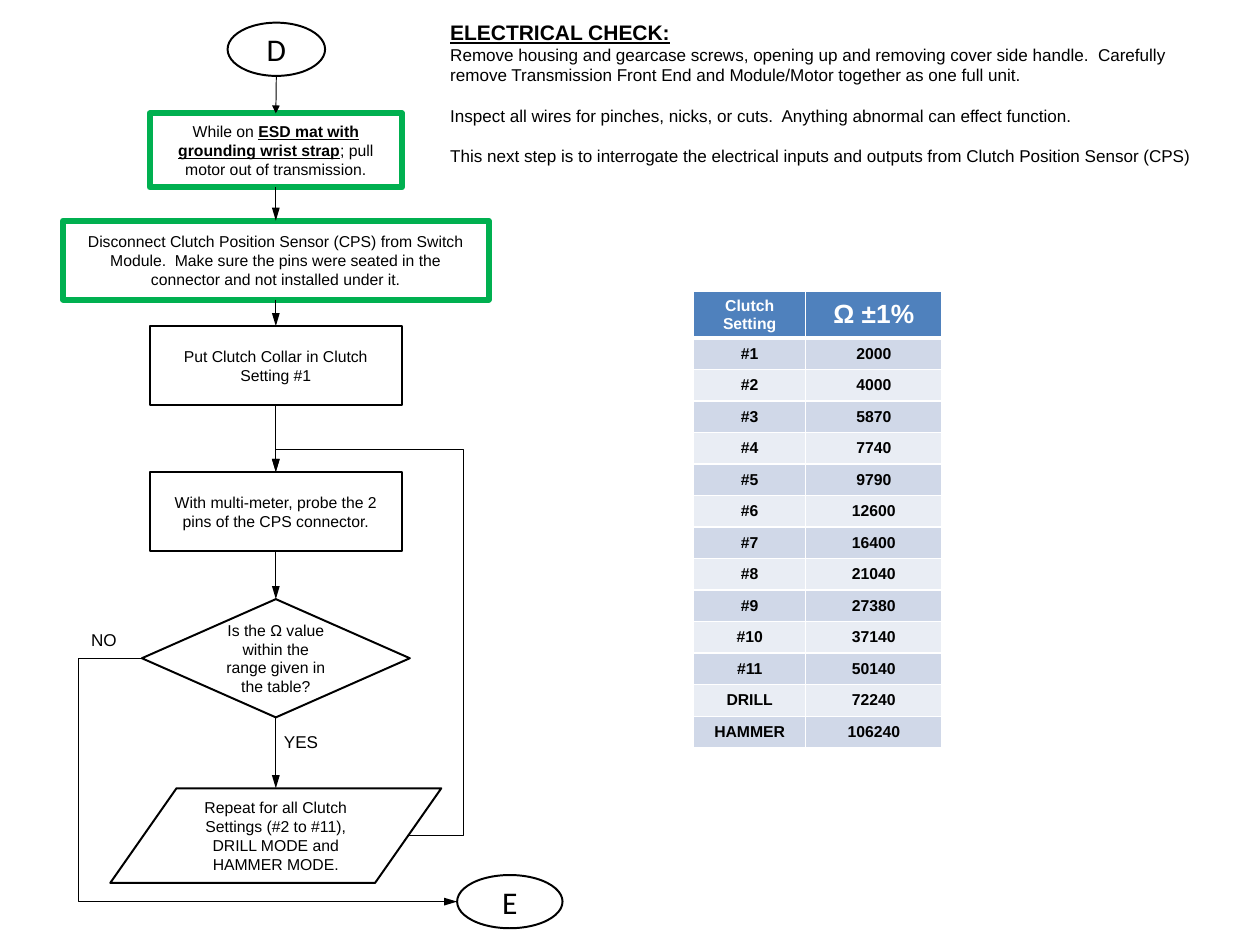
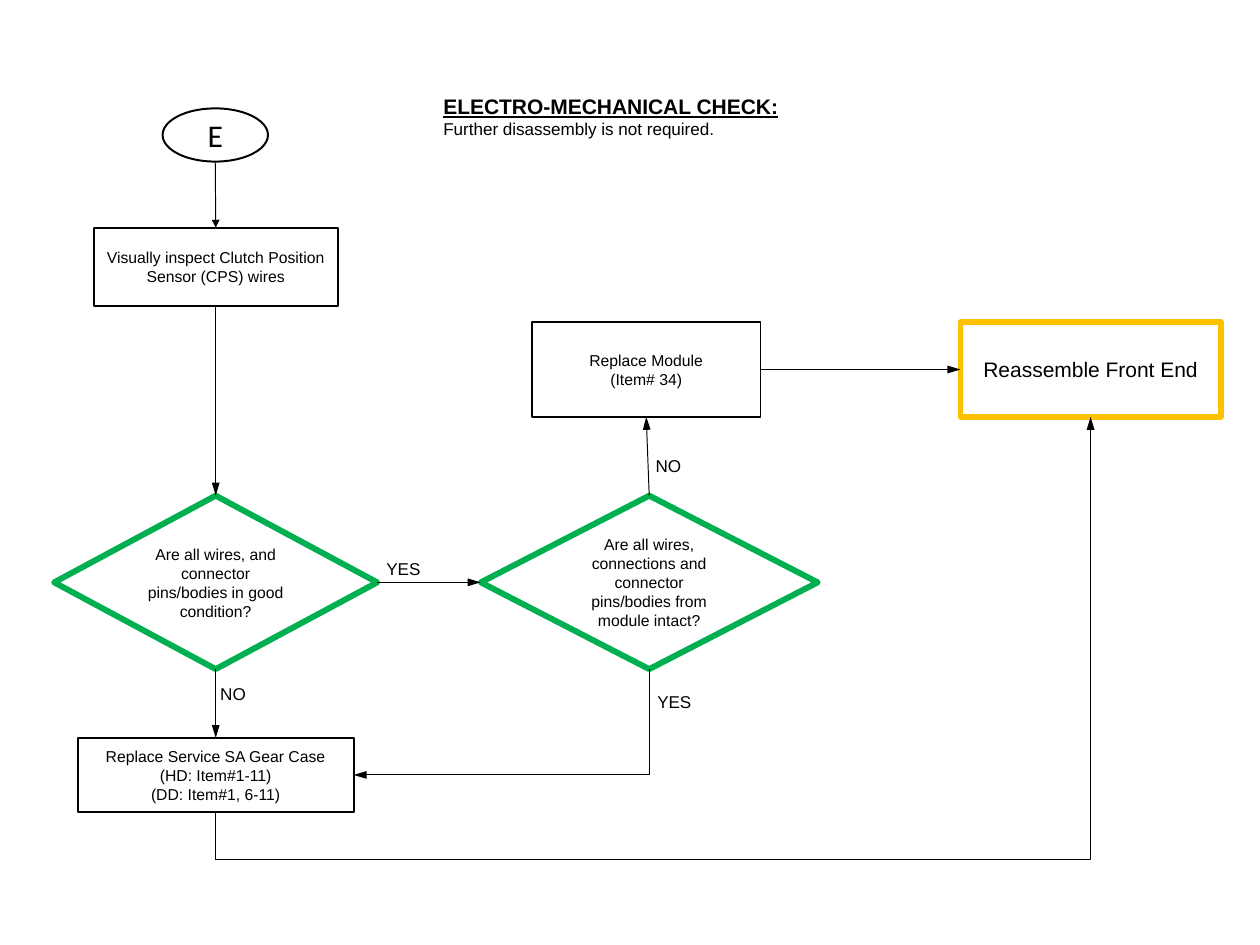
import dataclasses

import pptx
import pptx.util
import pptx.dml.color
import pptx.enum.shapes
import pptx.enum.text
import pptx.oxml
import pptx.oxml.ns

SHAPE = pptx.enum.shapes.MSO_SHAPE
LINK = pptx.enum.shapes.MSO_CONNECTOR
ALIGN = pptx.enum.text.PP_ALIGN
ANCHOR = pptx.enum.text.MSO_ANCHOR
TOP, LEFT, BOTTOM, RIGHT = range(4)
EMU_PER_PX = 9525
JOINABLE = (SHAPE.FLOWCHART_PROCESS, SHAPE.FLOWCHART_DECISION)


@dataclasses.dataclass(frozen=True)
class Theme:
    ink: str = "000000"
    paper: str = "FFFFFF"
    check: str = "00B050"
    finish: str = "FFC000"
    header: str = "4F81BD"
    bands: tuple = ("D0D8E8", "E9EDF4")
    font: str = "Arial"
    terminal_font: str = "Calibri"
    step: int = 12
    body: int = 13
    heading: int = 16
    unit: int = 20
    terminal: int = 24
    thin: float = 0.75
    outline: float = 1.5
    accent: float = 4.5


T = Theme()

RESISTANCES = [
    ("#1", "2000"), ("#2", "4000"), ("#3", "5870"), ("#4", "7740"),
    ("#5", "9790"), ("#6", "12600"), ("#7", "16400"), ("#8", "21040"),
    ("#9", "27380"), ("#10", "37140"), ("#11", "50140"),
    ("DRILL", "72240"), ("HAMMER", "106240"),
]


def px(n):
    return pptx.util.Emu(round(n * EMU_PER_PX))


def rgb(value):
    return pptx.dml.color.RGBColor.from_string(value)


def sub(parent, tag, **attrs):
    el = pptx.oxml.ns.qn(tag)
    child = parent.makeelement(el, attrs)
    parent.append(child)
    return child


def write(tf, paragraphs, size, align=ALIGN.CENTER, anchor=ANCHOR.MIDDLE,
          inset=(12, 7), font=T.font, color=T.ink, bold=False, gap=0):
    tf.word_wrap = True
    tf.auto_size = pptx.enum.text.MSO_AUTO_SIZE.NONE
    tf.vertical_anchor = anchor
    tf.margin_left = tf.margin_right = px(inset[0])
    tf.margin_top = tf.margin_bottom = px(inset[1])
    for i, runs in enumerate(paragraphs):
        p = tf.paragraphs[0] if i == 0 else tf.add_paragraph()
        p.alignment = align
        p.space_before = pptx.util.Pt(gap if i else 0)
        for text, strong in [(runs, False)] if isinstance(runs, str) else runs:
            add_run(p, text, size, font, color, bold or strong, strong)


def add_run(p, text, size, font=T.font, color=T.ink, bold=False, underline=False):
    r = p.add_run()
    r.text = text
    r.font.name = font
    r.font.size = pptx.util.Pt(size)
    r.font.bold = bold
    r.font.underline = underline
    r.font.color.rgb = rgb(color)


def add_node(s, kind, box, paragraphs, color=T.ink, size=T.step, **style):
    sp = s.shapes.add_shape(kind, *map(px, box))
    sp.shadow.inherit = False
    sp.fill.background()
    sp.line.color.rgb = rgb(color)
    sp.line.width = pptx.util.Pt(T.outline if color == T.ink else T.accent)
    sub(sp.line._get_or_add_ln(), "a:round")
    write(sp.text_frame, paragraphs, size, **style)
    return sp


def process(s, box, *paragraphs, **style):
    return add_node(s, SHAPE.FLOWCHART_PROCESS, box, paragraphs, **style)


def decision(s, box, text, **style):
    return add_node(s, SHAPE.FLOWCHART_DECISION, box, [text], **style)


def terminal(s, box, letter):
    return add_node(s, SHAPE.FLOWCHART_CONNECTOR, box, [letter], size=T.terminal,
                    font=T.terminal_font, inset=(10, 10))


def label(s, x, y, text):
    sp = s.shapes.add_textbox(px(x), px(y), px(85), px(34))
    write(sp.text_frame, [text], T.body, anchor=ANCHOR.TOP)


def add_heading(s, x, y, title, body, height):
    sp = s.shapes.title
    sp.left, sp.top, sp.width, sp.height = map(px, (x, y, 800, 34))
    common = dict(align=ALIGN.LEFT, anchor=ANCHOR.TOP, inset=(10, 5))
    write(sp.text_frame, [[(title, True)]], T.heading, **common)
    box = s.shapes.add_textbox(px(x), px(y + 25), px(800), px(height))
    write(box.text_frame, body, T.body, gap=15, **common)


def side_point(sp, side):
    x, y, w, h = (v / EMU_PER_PX for v in (sp.left, sp.top, sp.width, sp.height))
    return {TOP: (x + w / 2, y), LEFT: (x, y + h / 2),
            BOTTOM: (x + w / 2, y + h), RIGHT: (x + w, y + h / 2)}[side]


def style_arrow(c, length="lg"):
    c.line.color.rgb = rgb(T.ink)
    c.line.width = pptx.util.Pt(T.thin)
    sub(c.line._get_or_add_ln(), "a:tailEnd", type="triangle", w="med", len=length)
    sub(c._element.spPr, "a:effectLst")


def arrow(s, start, end, sides=(BOTTOM, TOP), length="lg"):
    points = side_point(start, sides[0]) + side_point(end, sides[1])
    c = s.shapes.add_connector(LINK.STRAIGHT, *map(px, points))
    if start.auto_shape_type in JOINABLE:
        c.begin_connect(start, sides[0])
    if end.auto_shape_type in JOINABLE:
        c.end_connect(end, sides[1])
    style_arrow(c, length)


def elbow(s, start, end, bends=(), vertical=False):
    (x0, y0), (x1, y1) = start, end
    dx, dy = x1 - x0, y1 - y0
    cx, cy = (x0 + x1) / 2, (y0 + y1) / 2
    lx, ly = (dy, -dx) if vertical else (dx, dy)
    c = s.shapes.add_connector(LINK.ELBOW, px(cx - lx / 2), px(cy - ly / 2),
                               px(cx + lx / 2), px(cy + ly / 2))
    spPr = c._element.spPr
    if vertical:
        spPr.find(pptx.oxml.ns.qn("a:xfrm")).set("rot", "5400000")
    geom = spPr.find(pptx.oxml.ns.qn("a:prstGeom"))
    geom.set("prst", f"bentConnector{2 + len(bends)}")
    guides = geom.find(pptx.oxml.ns.qn("a:avLst"))
    axes = [(x0, dx), (y0, dy)]
    if vertical:
        axes.reverse()
    for i, (bend, (origin, span)) in enumerate(zip(bends, axes), 1):
        ratio = round((bend - origin) / span * 100000)
        sub(guides, "a:gd", name=f"adj{i}", fmla=f"val {ratio}")
    style_arrow(c)


def fill_cell(cell, text, fill, size, color, bottom=1):
    cell.fill.solid()
    cell.fill.fore_color.rgb = rgb(fill)
    cell.vertical_anchor = ANCHOR.MIDDLE
    p = cell.text_frame.paragraphs[0]
    p.alignment = ALIGN.CENTER
    add_run(p, text, size, color=color, bold=True)
    tcPr = cell._tc.get_or_add_tcPr()
    for i, (edge, width) in enumerate((("L", 1), ("R", 1), ("T", 1), ("B", bottom))):
        ln = pptx.oxml.parse_xml(
            f'<a:ln{edge} {pptx.oxml.ns.nsdecls("a")} w="{pptx.util.Pt(width)}">'
            f'<a:solidFill><a:srgbClr val="{T.paper}"/></a:solidFill></a:ln{edge}>')
        tcPr.insert(i, ln)


def resistance_table(s, x, y):
    widths, head_h, row_h = (114, 138), 47, 32
    count = len(RESISTANCES) + 1
    table = s.shapes.add_table(count, 2, px(x), px(y), px(sum(widths)),
                               px(head_h + row_h * len(RESISTANCES))).table
    for column, width in zip(table.columns, widths):
        column.width = px(width)
    for i, row in enumerate(table.rows):
        row.height = px(row_h if i else head_h)
    for j, (text, size) in enumerate((("Clutch Setting", T.step), ("Ω ±1%", T.unit))):
        fill_cell(table.cell(0, j), text, T.header, size, T.paper, bottom=3)
    for i, values in enumerate(RESISTANCES):
        for j, text in enumerate(values):
            fill_cell(table.cell(i + 1, j), text, T.bands[i % 2], T.step, T.ink)


def electrical_check(s):
    add_heading(s, 447, 15, "ELECTRICAL CHECK:", [
        "Remove housing and gearcase screws, opening up and removing cover side handle.  "
        "Carefully remove Transmission Front End and Module/Motor together as one full unit.",
        "Inspect all wires for pinches, nicks, or cuts.  Anything abnormal can effect function.",
        "This next step is to interrogate the electrical inputs and outputs from "
        "Clutch Position Sensor (CPS)"], 136)
    entry = terminal(s, (231, 23, 99, 54), "D")
    pull = process(s, (152, 115, 256, 75), [
        ("While on ", False), ("ESD mat with grounding wrist strap", True),
        ("; pull motor out of transmission.", False)], color=T.check)
    disconnect = process(
        s, (64, 224, 432, 80),
        "Disconnect Clutch Position Sensor (CPS) from Switch Module.  Make sure the pins "
        "were seated in the connector and not installed under it.", color=T.check)
    collar = process(s, (152, 331, 256, 80), "Put Clutch Collar in Clutch Setting #1")
    probe = process(s, (152, 479, 256, 80),
                    "With multi-meter, probe the 2 pins of the CPS connector.")
    in_range = decision(s, (144, 608, 272, 120),
                        "Is the Ω value within the range given in the table?")
    repeat = add_node(
        s, SHAPE.FLOWCHART_DATA, (112, 800, 336, 96),
        ["Repeat for all Clutch Settings (#2 to #11), DRILL MODE and HAMMER MODE."],
        inset=(10, 5))
    leave = terminal(s, (464, 888, 107, 54), "E")
    arrow(s, entry, pull, length="med")
    steps = [pull, disconnect, collar, probe, in_range, repeat]
    for start, end in zip(steps, steps[1:]):
        arrow(s, start, end)
    elbow(s, (414, 848), side_point(probe, TOP), (471, 456))
    elbow(s, side_point(in_range, LEFT), side_point(leave, LEFT), (80,))
    label(s, 63, 632, "NO")
    label(s, 263, 735, "YES")
    resistance_table(s, 704, 296)


def electro_mechanical_check(s):
    add_heading(s, 440, 90, "ELECTRO-MECHANICAL CHECK:",
                ["Further disassembly is not required."], 32)
    entry = terminal(s, (165, 110, 107, 54), "E")
    inspect = process(s, (95, 231, 248, 80),
                      "Visually inspect Clutch Position Sensor (CPS) wires")
    wires = decision(s, (55, 503, 328, 176),
                     "Are all wires, and connector pins/bodies in good condition?",
                     color=T.check)
    gear_case = process(s, (79, 749, 280, 75), "Replace Service SA Gear Case",
                        "(HD: Item#1-11)", "(DD: Item#1, 6-11)")
    module_ok = decision(
        s, (488, 503, 342, 176),
        "Are all wires, connections and connector pins/bodies from module intact?",
        color=T.check)
    module = process(s, (540, 327, 232, 96), "Replace Module", "(Item# 34)")
    reassemble = process(s, (975, 327, 264, 96), "Reassemble Front End",
                         color=T.finish, size=T.heading)
    arrow(s, entry, inspect, length="med")
    arrow(s, inspect, wires)
    arrow(s, wires, gear_case)
    arrow(s, wires, module_ok, (RIGHT, LEFT))
    arrow(s, module_ok, module, (TOP, BOTTOM))
    arrow(s, module, reassemble, (RIGHT, LEFT))
    elbow(s, side_point(module_ok, BOTTOM), side_point(gear_case, RIGHT), vertical=True)
    elbow(s, side_point(gear_case, BOTTOM), side_point(reassemble, BOTTOM),
          (872,), vertical=True)
    for x, y, text in ((367, 560, "YES"), (194, 687, "NO"),
                       (636, 455, "NO"), (642, 695, "YES")):
        label(s, x, y, text)


def main():
    prs = pptx.Presentation()
    prs.slide_width, prs.slide_height = px(1279), px(959)
    for build in (electrical_check, electro_mechanical_check):
        build(prs.slides.add_slide(prs.slide_layouts[5]))
    prs.save("out.pptx")


if __name__ == "__main__":
    main()
